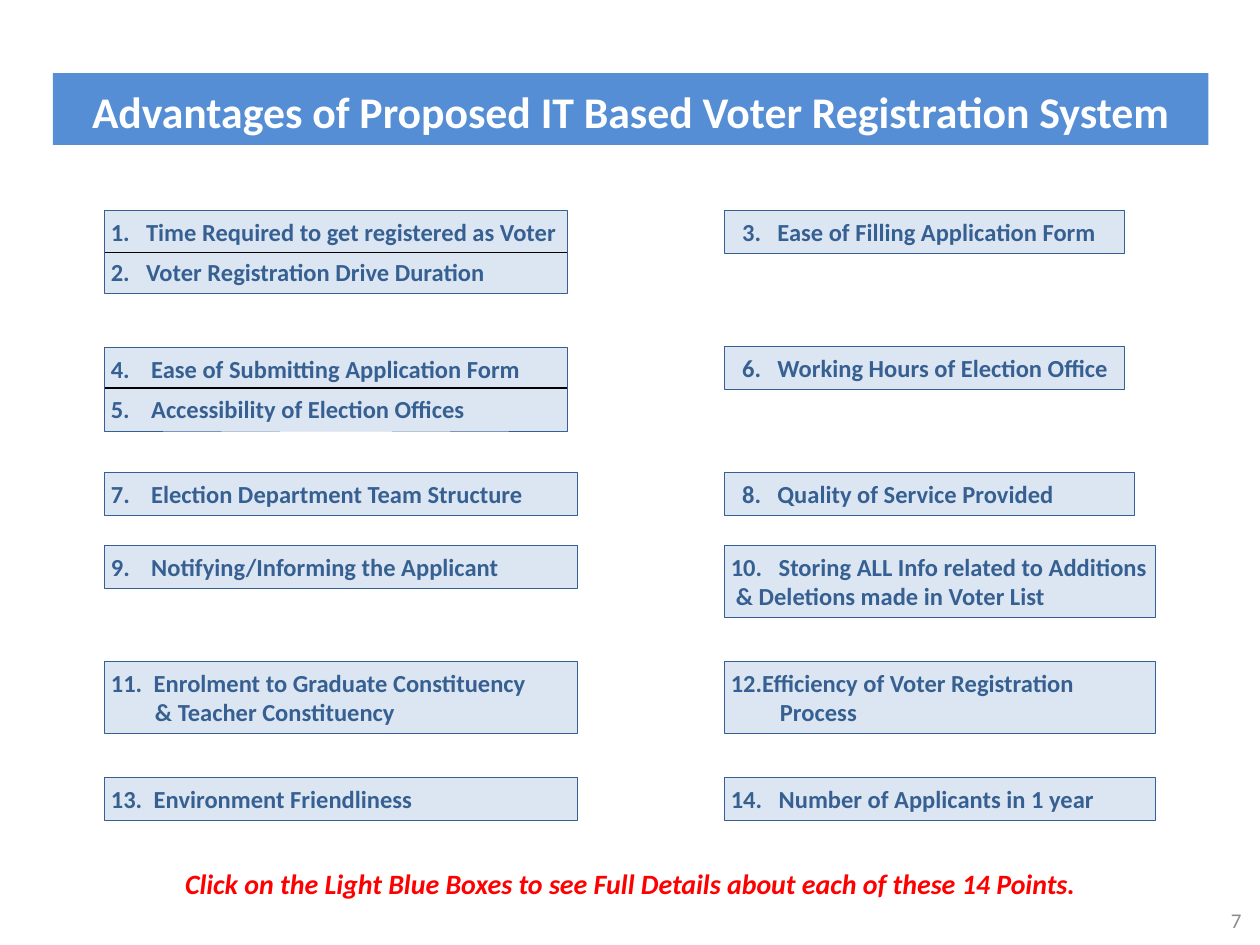
from dataclasses import dataclass

from lxml import etree
from pptx import Presentation
from pptx import util as u
from pptx.dml.color import RGBColor
from pptx.enum import shapes, text
from pptx.oxml.ns import qn

FONT = "Calibri"
BLUE = "376092"
PALE = "DCE6F2"
LEFT, RIGHT = 0.83, 5.75
ONE_LINE, TWO_LINES, TWO_ITEMS = 0.34, 0.57, 0.66


@dataclass
class Line:
    text: str
    margin: float = 0
    start: float = 0
    gap: int = 0


@dataclass
class Box:
    left: float
    top: float
    width: float
    height: float
    lines: list[Line]


@dataclass
class Divider:
    top: float
    color: str
    weight: float


BOXES = [
    Box(LEFT, 1.67, 3.67, TWO_ITEMS, [
        Line("1.\tTime Required to get registered as Voter", 0.28),
        Line("2.\tVoter Registration Drive Duration", 0.28, gap=6)]),
    Box(RIGHT, 1.67, 3.17, ONE_LINE, [
        Line("3.\tEase of Filling Application Form", 0.37, 0.09)]),
    Box(LEFT, 2.76, 3.67, TWO_ITEMS, [
        Line("4.\tEase of Submitting Application Form", 0.32),
        Line("5.\tAccessibility of Election Offices", 0.32, gap=6)]),
    Box(RIGHT, 2.75, 3.17, ONE_LINE, [
        Line("6.\tWorking Hours of Election Office", 0.37, 0.09)]),
    Box(LEFT, 3.75, 3.75, ONE_LINE, [
        Line("7.\tElection Department Team Structure", 0.32)]),
    Box(RIGHT, 3.75, 3.25, ONE_LINE, [
        Line("8.\tQuality of Service Provided", 0.37, 0.09)]),
    Box(LEFT, 4.33, 3.75, ONE_LINE, [
        Line("9.\tNotifying/Informing the Applicant", 0.32)]),
    Box(RIGHT, 4.33, 3.42, TWO_LINES, [
        Line("10.\tStoring ALL Info related to Additions", 0.38),
        Line("& Deletions made in Voter List", 0.04, 0.04)]),
    Box(LEFT, 5.25, 3.75, TWO_LINES, [
        Line("11.\tEnrolment to Graduate Constituency", 0.34),
        Line("& Teacher Constituency", 0.35, 0.35)]),
    Box(RIGHT, 5.25, 3.42, TWO_LINES, [
        Line("12.Efficiency of Voter Registration"),
        Line("Process", 0.39, 0.39)]),
    Box(LEFT, 6.17, 3.75, ONE_LINE, [
        Line("13.\tEnvironment Friendliness", 0.34)]),
    Box(RIGHT, 6.17, 3.42, ONE_LINE, [
        Line("14.\tNumber of Applicants in 1 year", 0.38)]),
]
DIVIDERS = [Divider(2, "000000", 0.25), Divider(3.08, "000000", 0.75)]


def rgb(value: str) -> RGBColor:
    return RGBColor.from_string(value)


def style(p, size: float, color: str, bold: bool = True, italic: bool = False) -> None:
    for r in p.runs:
        r.font.name = FONT
        r.font.size = u.Pt(size)
        r.font.bold = bold
        r.font.italic = italic
        r.font.color.rgb = rgb(color)


def add_rect(s, left: float, top: float, width: float, height: float, fill: str):
    sp = s.shapes.add_shape(shapes.MSO_SHAPE.RECTANGLE, u.Inches(left), u.Inches(top),
                            u.Inches(width), u.Inches(height))
    sp.shadow.inherit = False
    sp.fill.solid()
    sp.fill.fore_color.rgb = rgb(fill)
    sp.text_frame.word_wrap = True
    sp.text_frame.vertical_anchor = text.MSO_ANCHOR.TOP
    return sp


def add_title(s, title: str) -> None:
    sp = add_rect(s, 0.42, 0.58, 9.17, 0.57, "558ED5")
    sp.line.fill.background()
    tf = sp.text_frame
    tf.margin_top = u.Inches(0.09)
    tf.text = title
    p = tf.paragraphs[0]
    p.alignment = text.PP_ALIGN.CENTER
    style(p, 25, "FFFFFF")


def add_box(s, box: Box) -> None:
    sp = add_rect(s, box.left, box.top, box.width, box.height, PALE)
    sp.line.color.rgb = rgb(BLUE)
    sp.line.width = u.Pt(0.25)
    tf = sp.text_frame
    tf.margin_left = tf.margin_right = tf.margin_top = tf.margin_bottom = u.Inches(0.05)
    tf.text = "\n".join(line.text for line in box.lines)
    for p, line in zip(tf.paragraphs, box.lines):
        p.alignment = text.PP_ALIGN.LEFT
        p.space_before = u.Pt(line.gap)
        pPr = p._p.get_or_add_pPr()
        pPr.set("marL", str(u.Inches(line.margin)))
        pPr.set("indent", str(u.Inches(line.start) - u.Inches(line.margin)))
        style(p, 14, BLUE)


def add_divider(s, divider: Divider) -> None:
    y = u.Inches(divider.top)
    line = s.shapes.add_connector(shapes.MSO_CONNECTOR.STRAIGHT,
                                  u.Inches(LEFT), y, u.Inches(4.5), y)
    line.line.color.rgb = rgb(divider.color)
    line.line.width = u.Pt(divider.weight)
    etree.SubElement(line._element.spPr, qn("a:effectLst"))


def add_label(s, left: float, top: float, width: float, height: float, label: str):
    tf = s.shapes.add_textbox(u.Inches(left), u.Inches(top),
                              u.Inches(width), u.Inches(height)).text_frame
    tf.word_wrap = True
    tf.text = label
    return tf


def main() -> None:
    prs = Presentation()
    prs.slide_width, prs.slide_height = u.Inches(10), u.Inches(7.5)
    s = prs.slides.add_slide(prs.slide_layouts[6])

    add_title(s, "Advantages of Proposed IT Based Voter Registration System")
    for box in BOXES:
        add_box(s, box)
    for divider in DIVIDERS:
        add_divider(s, divider)

    hint = add_label(s, 0.42, 6.83, 9.17, 0.37, "Click on the Light Blue Boxes to see "
                     "Full Details about each of these 14 Points.")
    hint.paragraphs[0].alignment = text.PP_ALIGN.CENTER
    style(hint.paragraphs[0], 16, "FF0000", italic=True)

    number = add_label(s, 9.67, 7.1, 0.33, 0.4, "7")
    number.vertical_anchor = text.MSO_ANCHOR.MIDDLE
    style(number.paragraphs[0], 12, "8C8C8C", bold=False)

    prs.save("out.pptx")


if __name__ == "__main__":
    main()
